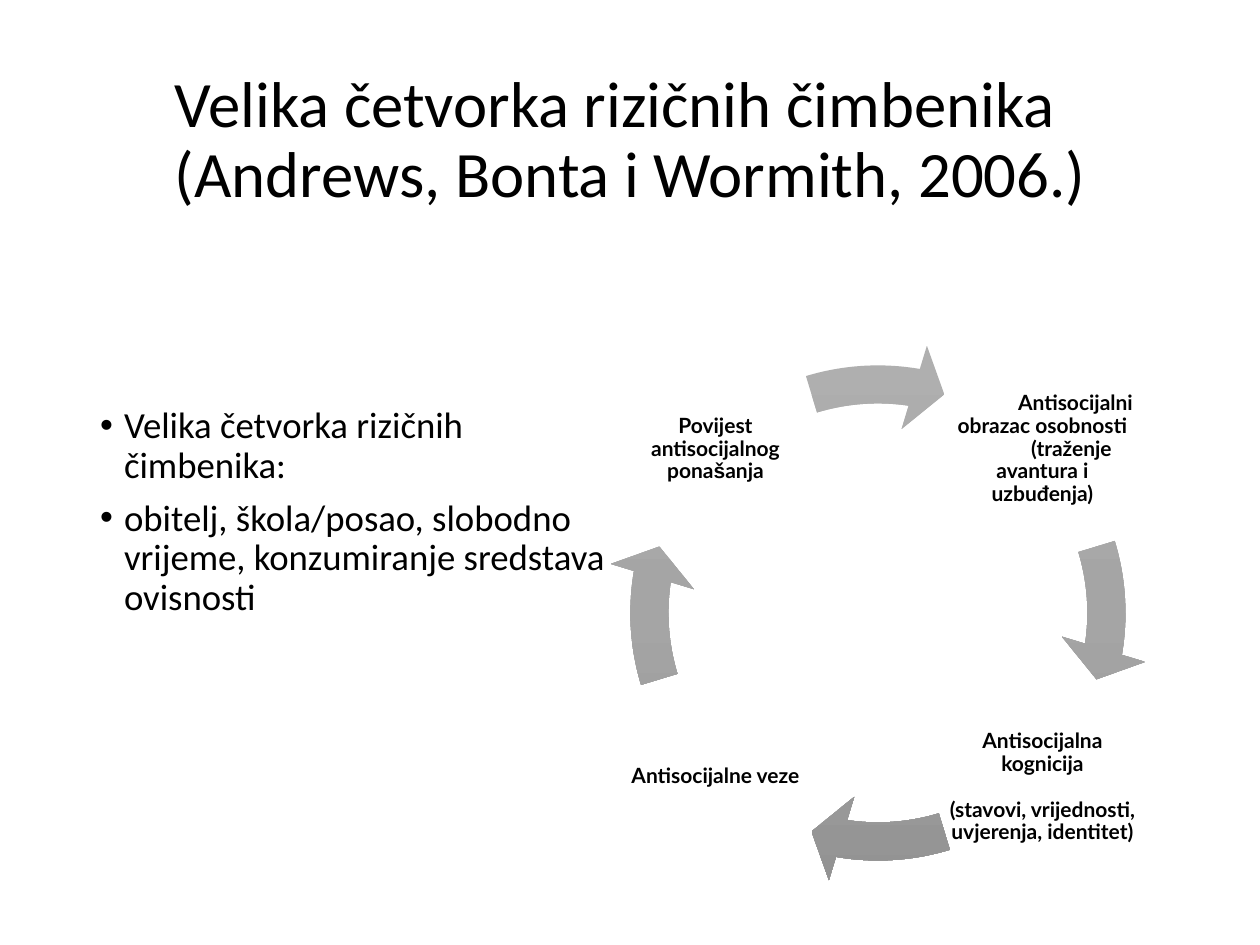
from pptx import Presentation
from pptx import util as u
from pptx.dml.color import RGBColor
from pptx.enum import shapes, text
from lxml import etree

PX = 914400 / 126
C = {"text": "000000", "light": "AFAFAF", "mid": "A5A5A5", "dark": "939393"}
A = "http://schemas.openxmlformats.org/drawingml/2006/main"


def px(n):
    return u.Emu(round(n * PX))


def add_text(s, box, paras, size, margins, anchor, align, bold=False):
    """paras: list of (runs, first-line indent px, space before pt); run: (text, font)."""
    sp = s.shapes.add_textbox(*map(px, box))
    tf = sp.text_frame
    tf.word_wrap = True
    tf.vertical_anchor = anchor
    tf.margin_left, tf.margin_top, tf.margin_right, tf.margin_bottom = map(px, margins)
    for i, (runs, indent, before) in enumerate(paras):
        p = tf.paragraphs[0] if i == 0 else tf.add_paragraph()
        p.alignment = align
        p.line_spacing = 0.9
        p.space_before = u.Pt(before)
        if indent:
            p._p.get_or_add_pPr().set("indent", str(px(indent)))
        for words, font in runs:
            r = p.add_run()
            r.text = words
            r.font.name = font
            r.font.size = u.Pt(size)
            r.font.bold = bold
            r.font.color.rgb = RGBColor.from_string(C["text"])
    return tf


prs = Presentation()
prs.slide_width, prs.slide_height = px(1260), px(945)
s = prs.slides.add_slide(prs.slide_layouts[6])
LEFT, CENTER = text.PP_ALIGN.LEFT, text.PP_ALIGN.CENTER
TOP, MIDDLE = text.MSO_ANCHOR.TOP, text.MSO_ANCHOR.MIDDLE

# Title
title = "Velika četvorka rizičnih čimbenika (Andrews, Bonta i Wormith, 2006.)"
add_text(s, (87, 50, 1086, 183), [([(title, "Calibri")], 0, 0)], 37,
         (88, 6, 13, 6), MIDDLE, LEFT)

# Bulleted list
items = ["Velika četvorka rizičnih čimbenika:",
         "obitelj, škola/posao, slobodno vrijeme, konzumiranje sredstava ovisnosti"]
tf = add_text(s, (87, 345, 533, 508), [([(t, "Calibri")], -24, 7.5) for t in items], 21,
              (13, 62, 13, 6), TOP, LEFT)
for p in tf.paragraphs:
    pPr = p._p.get_or_add_pPr()
    pPr.set("marL", str(px(24)))
    etree.SubElement(pPr, f"{{{A}}}buFont").set("typeface", "Arial")
    etree.SubElement(pPr, f"{{{A}}}buChar").set("char", "•")

# Cycle: labels clockwise from the top right, each followed by its arrow
X1, X2, Y1, Y2 = 619, 946, 353, 680
labels = [
    (X2, Y1, 3, [([("Antisocijalni obrazac osobnosti", "Lato")], 66, 0),
                 ([("(traženje avantura i uzbuđenja)", "Lato")], 58, 0)]),
    (X2, Y2, 25, [([("Antisocijalna kognicija", "Lato")], 0, 0),
                  ([("(stavovi, vrijednosti, uvjerenja, identitet)", "Lato")], 0, 13)]),
    (X1, Y2, 3, [([("Antisocijalne veze", "Lato")], 0, 0)]),
    (X1, Y1, 3, [([("Povijest antisocijalnog pona", "Lato"), ("š", "Arial"),
                   ("anja", "Lato")], 0, 0)]),
]
QUARTER, FULL = 54, 216  # turns in adjustment units
for i, (x, y, top, paras) in enumerate(labels):
    add_text(s, (x, y, 193, 193), paras, 12, (3, top, 3, 3), MIDDLE, CENTER, True)

    sp = s.shapes.add_shape(shapes.MSO_SHAPE.CIRCULAR_ARROW, *map(px, (606, 341, 544, 544)))
    sp.shadow.inherit = False
    sp.line.fill.background()
    turn = i * QUARTER
    for n, value in enumerate((0.07, 4.65, 5.49 + turn, (205.86 + turn) % FULL, 0.08)):
        sp.adjustments[n] = value
    sp.fill.gradient()
    gs_list = sp.fill._fill._gradFill.find(f"{{{A}}}gsLst")
    for gs in list(gs_list):
        gs_list.remove(gs)
    for pos, name in ((0, "light"), (50, "mid"), (100, "dark")):
        gs = etree.SubElement(gs_list, f"{{{A}}}gs", pos=str(pos * 1000))
        etree.SubElement(gs, f"{{{A}}}srgbClr", val=C[name])
    sp.fill.gradient_angle = 270

prs.save("out.pptx")
